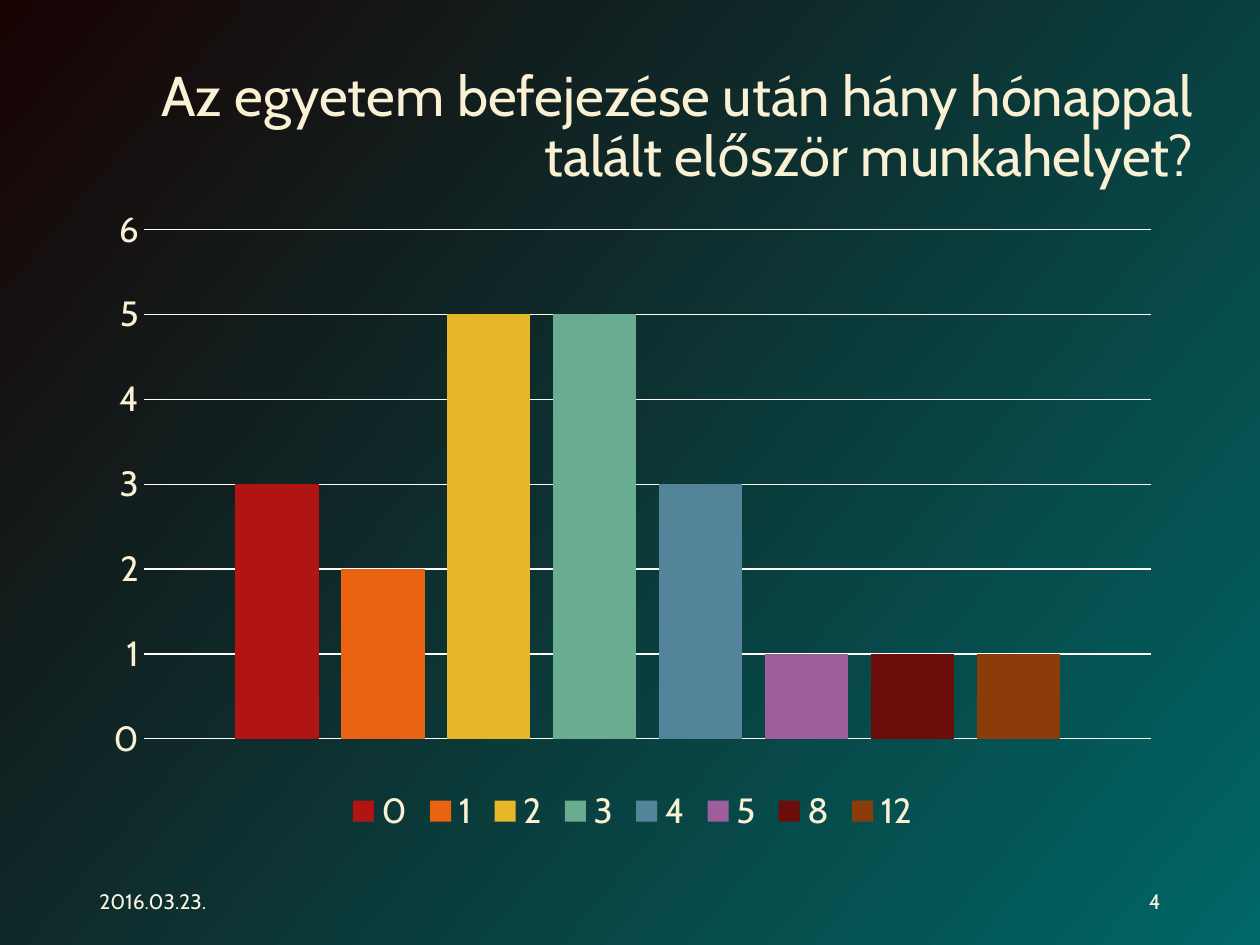
from pptx import Presentation
from pptx.chart.data import CategoryChartData
from pptx.dml.color import RGBColor
from pptx.enum.chart import XL_CHART_TYPE as ChartType, XL_LEGEND_POSITION as LegendPosition
from pptx.enum.chart import XL_TICK_MARK as TickMark
from pptx.enum.text import MSO_ANCHOR as Anchor, MSO_AUTO_SIZE as AutoSize, PP_ALIGN as Align
from pptx.util import Emu, Pt

SCALE = 914400 / 126
FONT = "Cabin"
COLORS = {
    "dark": "190303",
    "teal": "006666",
    "text": "FAF1D4",
    "footer": "FBF4E0",
    "grid": "FEFDF9",
}
# Months until first job: (answers, bar colour)
MONTHS = {
    "0": (3, "B01513"),
    "1": (2, "EA6312"),
    "2": (5, "E6B729"),
    "3": (5, "6AAC90"),
    "4": (3, "54849A"),
    "5": (1, "9E5E9B"),
    "8": (1, "6A0D0B"),
    "12": (1, "8C3B0B"),
}


def px(length):
    return Emu(round(length * SCALE))


def rgb(value):
    return RGBColor.from_string(value)


def style_font(font, size, color):
    font.name = FONT
    font.size = Pt(size)
    font.bold = False
    font.color.rgb = rgb(color)


def write_text(shape, text, size=12, color=COLORS["text"], align=Align.LEFT, spacing=1.0):
    frame = shape.text_frame
    frame.word_wrap = True
    frame.auto_size = AutoSize.NONE
    frame.vertical_anchor = Anchor.MIDDLE
    paragraph = frame.paragraphs[0]
    paragraph.alignment = align
    paragraph.line_spacing = spacing
    run = paragraph.add_run()
    run.text = text
    style_font(run.font, size, color)


def paint_background(slide):
    fill = slide.background.fill
    fill.gradient()
    fill.gradient_angle = 320
    for stop, name in zip(fill.gradient_stops, ("dark", "teal")):
        stop.color.rgb = rgb(COLORS[name])


def place_title(slide, left, top, width, height):
    title = slide.shapes.title
    title.left, title.top = px(left), px(top)
    title.width, title.height = px(width), px(height)
    write_text(title, "Az egyetem befejezése után hány hónappal talált először munkahelyet?",
               size=32, align=Align.RIGHT, spacing=0.9)


def add_month_chart(slide, left, top, width, height):
    data = CategoryChartData(number_format="###0")
    data.categories = ["1"]
    for month, (answers, _) in MONTHS.items():
        data.add_series(month, [answers])
    chart = slide.shapes.add_chart(ChartType.COLUMN_CLUSTERED, px(left), px(top),
                                   px(width), px(height), data).chart
    chart.has_title = False
    style_font(chart.font, 20, COLORS["text"])

    # Bars
    plot = chart.plots[0]
    plot.gap_width = 219
    plot.overlap = -27
    plot.vary_by_categories = False
    for series, (_, color) in zip(plot.series, MONTHS.values()):
        series.format.fill.solid()
        series.format.fill.fore_color.rgb = rgb(color)

    # Axes
    chart.category_axis.visible = False
    axis = chart.value_axis
    axis.minimum_scale, axis.maximum_scale, axis.major_unit = 0, 6, 1
    axis.major_tick_mark = axis.minor_tick_mark = TickMark.NONE
    axis.tick_labels.number_format = "###0"
    axis.tick_labels.number_format_is_linked = False
    axis.format.line.fill.background()
    grid_line = axis.major_gridlines.format.line
    grid_line.width = Pt(0.75)
    grid_line.color.rgb = rgb(COLORS["grid"])

    # Legend
    chart.has_legend = True
    chart.legend.position = LegendPosition.BOTTOM
    chart.legend.include_in_layout = False


def add_footer(slide, left, top, width, height):
    field_width = 284
    fields = (("2016.03.23.", left, Align.LEFT),
              ("4", left + width - field_width, Align.RIGHT))
    for text, field_left, align in fields:
        box = slide.shapes.add_textbox(px(field_left), px(top), px(field_width), px(height))
        write_text(box, text, color=COLORS["footer"], align=align)


def main():
    presentation = Presentation()
    presentation.slide_width, presentation.slide_height = px(1260), px(945)
    slide = presentation.slides.add_slide(presentation.slide_layouts[5])
    paint_background(slide)
    place_title(slide, 25, 32, 1181, 193)
    add_footer(slide, 87, 876, 1086, 50)
    add_month_chart(slide, 92, 195, 1081, 645)
    presentation.save("out.pptx")


if __name__ == "__main__":
    main()
